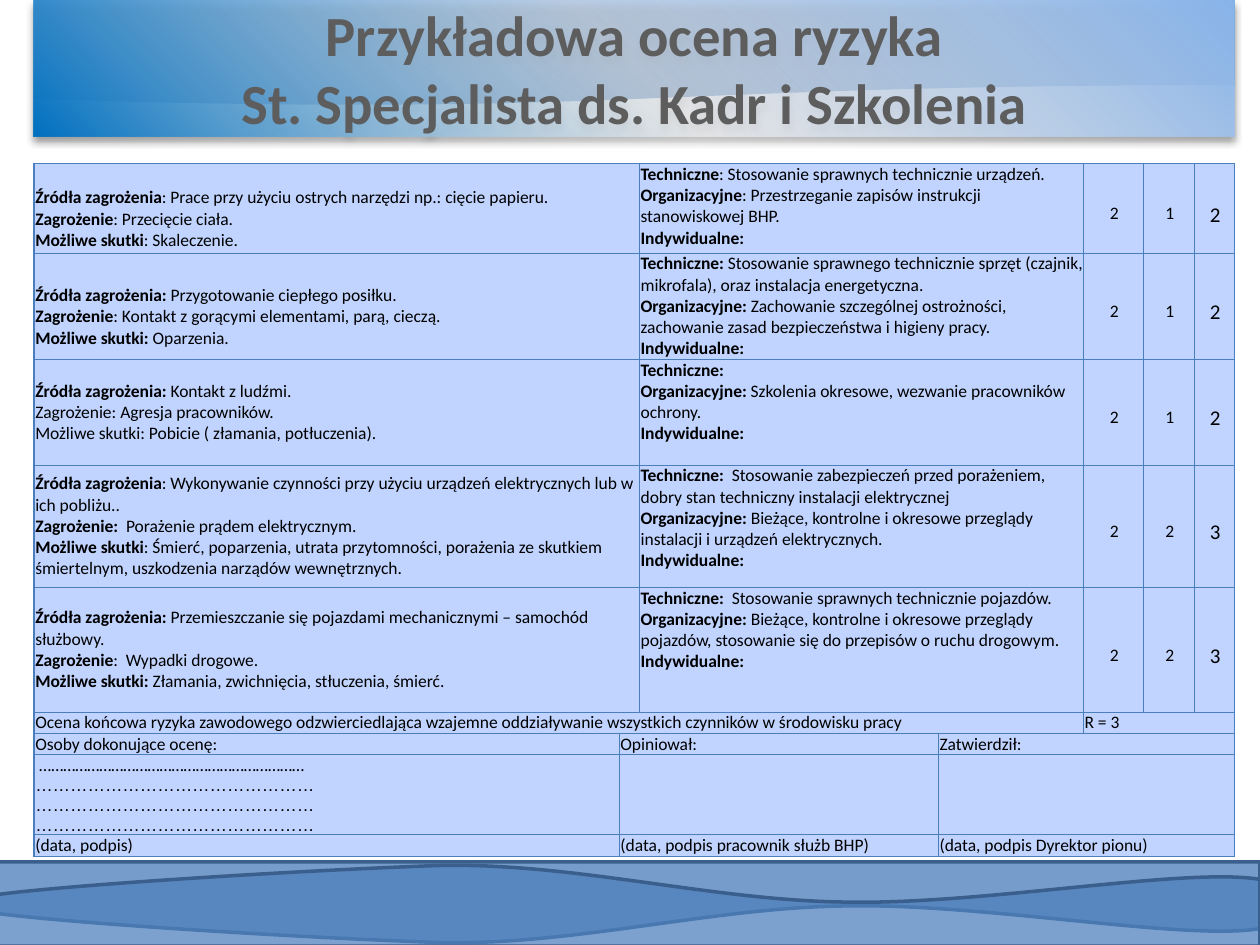
from dataclasses import dataclass
from lxml import etree
from pptx import Presentation
from pptx.dml.color import RGBColor
from pptx.enum.shapes import MSO_SHAPE
from pptx.enum.text import MSO_ANCHOR, PP_ALIGN
from pptx.oxml import parse_xml
from pptx.oxml.ns import qn
from pptx.util import Inches, Pt

RECT, WAVE = MSO_SHAPE.RECTANGLE, MSO_SHAPE.FLOWCHART_DOCUMENT
MID, TOP = MSO_ANCHOR.MIDDLE, MSO_ANCHOR.TOP
CENTER, LEFT = PP_ALIGN.CENTER, PP_ALIGN.LEFT
NS = 'xmlns:a="http://schemas.openxmlformats.org/drawingml/2006/main"'


@dataclass(frozen=True)
class Theme:
    font: str = "Calibri"
    dots: str = "Arial"
    blue: str = "4F81BD"
    edge: str = "3A5F8C"
    grid: str = "4B7EBC"
    cell: str = "C0D4FF"
    ink: str = "000000"
    head: str = "5D5D5D"
    title: float = 32.4
    body: float = 10
    score: float = 12


T = Theme()
WIDE, HIGH = 10, 7.5
COLS = [4.64, 0.16, 2.37, 1.15, 0.48, 0.4, 0.32]
ROWS = [0.71, 0.84, 0.84, 0.97, 0.99, 0.17, 0.17, 0.63, 0.17]
GAP = 0.17  # one text line kept free above the hazard text

# Each risk: hazard lines, measure lines, scores, top gap; "|" ends the bold part
RISKS = [
    (["Źródła zagrożenia|: Prace przy użyciu ostrych narzędzi np.: cięcie papieru.",
      "Zagrożenie|: Przecięcie ciała.",
      "Możliwe skutki|: Skaleczenie."],
     ["Techniczne|: Stosowanie sprawnych technicznie urządzeń.",
      "Organizacyjne|: Przestrzeganie zapisów instrukcji stanowiskowej BHP.",
      "Indywidualne:|"], "212", GAP),
    (["Źródła zagrożenia: |Przygotowanie ciepłego posiłku.",
      "Zagrożenie|: Kontakt z gorącymi elementami, parą, cieczą.",
      "Możliwe skutki: |Oparzenia."],
     ["Techniczne: |Stosowanie sprawnego technicznie sprzęt (czajnik, mikrofala), "
      "oraz instalacja energetyczna.",
      "Organizacyjne: |Zachowanie szczególnej ostrożności, zachowanie zasad "
      "bezpieczeństwa i higieny pracy.",
      "Indywidualne:|"], "212", GAP),
    (["Źródła zagrożenia: |Kontakt z ludźmi.",
      "Zagrożenie: Agresja pracowników.",
      "Możliwe skutki: Pobicie ( złamania, potłuczenia)."],
     ["Techniczne:|",
      "Organizacyjne:| Szkolenia okresowe, wezwanie pracowników ochrony.",
      "Indywidualne:|"], "212", 0),
    (["Źródła zagrożenia|: Wykonywanie czynności przy użyciu urządzeń elektrycznych "
      "lub w ich pobliżu..",
      "Zagrożenie:  |Porażenie prądem elektrycznym.",
      "Możliwe skutki|: Śmierć, poparzenia, utrata przytomności, porażenia ze skutkiem "
      "śmiertelnym, uszkodzenia narządów wewnętrznych."],
     ["Techniczne:  |Stosowanie zabezpieczeń przed porażeniem, dobry stan techniczny "
      "instalacji elektrycznej",
      "Organizacyjne: |Bieżące, kontrolne i okresowe przeglądy instalacji i urządzeń "
      "elektrycznych.",
      "Indywidualne:|"], "223", 0),
    (["Źródła zagrożenia: |Przemieszczanie się pojazdami mechanicznymi – samochód służbowy.",
      "Zagrożenie|:  Wypadki drogowe.",
      "Możliwe skutki: |Złamania, zwichnięcia, stłuczenia, śmierć."],
     ["Techniczne:  |Stosowanie sprawnych technicznie pojazdów.",
      "Organizacyjne: |Bieżące, kontrolne i okresowe przeglądy pojazdów, stosowanie się "
      "do przepisów o ruchu drogowym.",
      "Indywidualne:|"], "223", 0),
]
DOTS = "…" * 16
SIGNS = [
    ["Osoby dokonujące ocenę:", "Opiniował:", "Zatwierdził:"],
    ["\N{NO-BREAK SPACE}" + "…" * 22, "", ""],
    ["(data, podpis)", "(data, podpis pracownik służb BHP)", "(data, podpis Dyrektor pionu)"],
]


def rgb(code):
    return RGBColor.from_string(code)


def fade(shape, share):
    """Make a solid fill partly see-through."""
    color = shape.fill._xPr.find(qn("a:solidFill"))[0]
    etree.SubElement(color, qn("a:alpha")).set("val", str(share * 1000))


def style(para, size, face=T.font, bold=None, color=T.ink):
    font = para.font
    font.name, font.size, font.bold = face, Pt(size), bold
    font.color.rgb = rgb(color)


def bend(shape, first):
    """Turn the straight steps from the given one on into cubic curves."""
    steps = list(shape._element.iter(qn("a:lnTo")))[first:]
    for i in range(0, len(steps) - 2, 3):
        curve = etree.Element(qn("a:cubicBezTo"))
        steps[i].addprevious(curve)
        for step in steps[i:i + 3]:
            curve.append(step[0])
            step.getparent().remove(step)


def waves(slide, left, top, width, height):
    """Two mirrored bands along the foot of the slide."""
    knots = [(10, 7.37), (9.42, 7.47), (7.82, 7.17), (6.73, 7.19), (5.64, 7.2),
             (4.55, 7.51), (3.46, 7.48), (2.36, 7.44), (0.58, 7.33), (-0.02, 7.25)]
    points = [(left, top), (left + width, top)] + knots
    flip = [(x, 2 * top + height - y) for x, y in points]
    for band, share in ((points, 78), (flip, 74)):
        spots = [(Inches(x), Inches(y)) for x, y in band]
        pen = slide.shapes.build_freeform(*spots[0])
        pen.add_line_segments(spots[1:], close=True)
        shape = pen.convert_to_shape()
        bend(shape, 2)
        shape.shadow.inherit = False
        shape.fill.solid()
        shape.fill.fore_color.rgb = rgb(T.blue)
        fade(shape, share)
        shape.line.color.rgb, shape.line.width = rgb(T.edge), Pt(2)


def banner(slide, left, top, width, height):
    """Title over a gradient with a wavy sheet behind it."""
    for kind, share in ((WAVE, 0.78), (RECT, 1)):
        box = slide.shapes.add_shape(kind, Inches(left), Inches(top),
                                     Inches(width), Inches(height * share))
        box.shadow.inherit = False
        box.fill.solid()
        box.fill.fore_color.rgb = rgb(T.blue)
        box.line.fill.background()
    # Gradient and drop shadow of the front box
    props = box._element.spPr
    props.replace(props.find(qn("a:solidFill")), parse_xml(
        f'<a:gradFill {NS}><a:gsLst><a:gs pos="0"><a:srgbClr val="0070C0"/></a:gs>'
        '<a:gs pos="50000"><a:srgbClr val="F9FBFE"><a:alpha val="62000"/></a:srgbClr></a:gs>'
        '<a:gs pos="100000"><a:srgbClr val="87B3E9"/></a:gs></a:gsLst>'
        '<a:lin ang="18900000" scaled="0"/></a:gradFill>'))
    props.find(qn("a:effectLst")).append(parse_xml(
        f'<a:outerShdw {NS} blurRad="{Pt(4)}" dist="{Pt(3)}" dir="5400000" rotWithShape="0">'
        '<a:srgbClr val="000000"><a:alpha val="40000"/></a:srgbClr></a:outerShdw>'))
    frame = box.text_frame
    frame.margin_top = frame.margin_bottom = 0
    frame.vertical_anchor, frame.word_wrap = MID, True
    para = frame.paragraphs[0]
    para.text = "Przykładowa ocena ryzyka\vSt. Specjalista ds. Kadr i Szkolenia"
    para.alignment = CENTER
    style(para, T.title, bold=True, color=T.head)


def write(cell, lines, size=T.body, anchor=TOP, align=LEFT, space=None, gap=0):
    cell.vertical_anchor, cell.margin_top = anchor, Inches(gap)
    for i, line in enumerate(lines):
        para = cell.text_frame.add_paragraph() if i else cell.text_frame.paragraphs[0]
        para.alignment, para.line_spacing = align, space
        style(para, size, T.dots if line == DOTS else T.font)
        label, mark, rest = line.partition("|")
        for text, bold in ((label, bool(mark)), (rest, False)):
            if text:
                run = para.add_run()
                run.text, run.font.bold = text, bold


def dress(cell):
    """Fill, margins and borders shared by all cells."""
    cell.margin_left = Inches(0.01)
    cell.margin_right = cell.margin_top = cell.margin_bottom = 0
    props = cell._tc.get_or_add_tcPr()
    for side in "LRTB":
        props.append(parse_xml(
            f'<a:ln{side} {NS} w="{Pt(0.75)}"><a:solidFill><a:srgbClr val="{T.grid}"/>'
            f'</a:solidFill></a:ln{side}>'))
    cell.fill.solid()
    cell.fill.fore_color.rgb = rgb(T.cell)
    style(cell.text_frame.paragraphs[0], T.body)


def risks(slide, left, top, width, height):
    """Risk rows, the final score and the signature rows."""
    table = slide.shapes.add_table(len(ROWS), len(COLS), Inches(left), Inches(top),
                                   Inches(width), Inches(height)).table
    table.first_row = table.horz_banding = False
    for col, share in zip(table.columns, COLS):
        col.width = Inches(width * share / sum(COLS))
    for row, share in zip(table.rows, ROWS):
        row.height = Inches(height * share / sum(ROWS))
    for cell in table.iter_cells():
        dress(cell)

    def span(row, first, last):
        cell = table.cell(row, first)
        if last > first:
            cell.merge(table.cell(row, last))
        return cell

    for r, (hazard, steps, marks, gap) in enumerate(RISKS):
        write(span(r, 0, 1), hazard, anchor=MID, gap=gap)
        write(span(r, 2, 3), steps)
        for c, mark in enumerate(marks, 4):
            size = T.score if c == 6 else T.body
            write(table.cell(r, c), [mark], size, MID, CENTER, 1.5)

    final = len(RISKS)
    write(span(final, 0, 3), ["Ocena końcowa ryzyka zawodowego odzwierciedlająca wzajemne "
                              "oddziaływanie wszystkich czynników w środowisku pracy"])
    write(span(final, 4, 6), ["R = 3"])
    for r, texts in enumerate(SIGNS, final + 1):
        for text, ends in zip(texts, ((0, 0), (1, 2), (3, 6))):
            lines = [text] + [DOTS] * 3 if "…" in text else [text]
            write(span(r, *ends), lines)


def main():
    deck = Presentation()
    deck.slide_width, deck.slide_height = Inches(WIDE), Inches(HIGH)
    slide = deck.slides.add_slide(deck.slide_layouts[6])
    waves(slide, -0.03, 6.84, 10.03, 0.67)
    banner(slide, 0.27, 0, 9.53, 1.08)
    risks(slide, 0.27, 1.3, 9.53, 5.49)
    deck.save("out.pptx")


if __name__ == "__main__":
    main()
